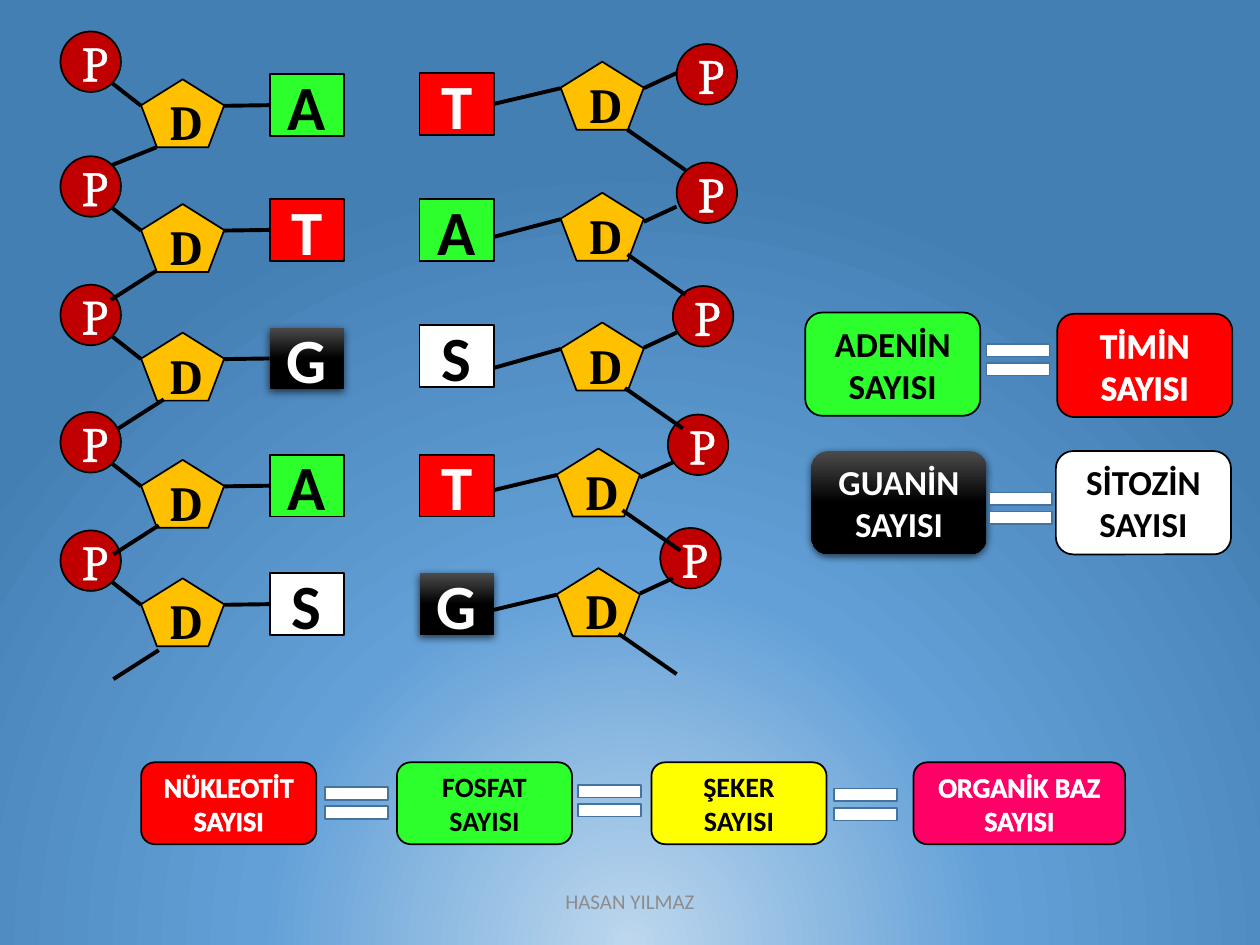
"""Build a slide on base pairing in a DNA ladder."""
from typing import NamedTuple, Optional

from lxml.etree import SubElement
from pptx import Presentation
from pptx.dml.color import RGBColor
from pptx.enum.shapes import MSO_CONNECTOR, MSO_SHAPE
from pptx.enum.text import MSO_ANCHOR, PP_ALIGN
from pptx.oxml import parse_xml
from pptx.oxml.ns import nsdecls, qn
from pptx.util import Inches, Pt

COLORS = {
    "black": "000000", "white": "FFFFFF", "pale": "FEFEFE", "gray": "8C8C8C",
    "green": "2DFF2D", "red": "FF0000", "wine": "C00000", "gold": "FFC000",
    "yellow": "FFFF00", "pink": "FF0066", "blue": "5B9BD5", "steel": "43739E",
    "coal": "4B4B4B", "sky": "BDD7EE", "mid": "63A0D7", "deep": "447FB4",
}


class Type(NamedTuple):
    size: int
    ink: str = "black"
    edge: str = ""
    face: str = "Calibri"
    bold: bool = True
    gap: int = 0


class Left(NamedTuple):
    top: float
    base: str
    x: float
    y: float
    dx: float = -0.36
    dy: float = 0.23


class Right(NamedTuple):
    top: float
    base: str
    sugar: tuple
    acid: tuple
    bond: float
    arm: float
    tail: tuple


class Box(NamedTuple):
    text: str
    fill: str
    x: float
    y: float
    w: float
    h: float
    type: Type


ACID = Type(28, "white", "white", "Cambria", False)
SUGAR = Type(28, face="Cambria")
PLAIN = Type(36)
GLOW = Type(36, "pale", "blue", gap=50)
BASES = {"A": ("green", PLAIN), "T": ("red", GLOW),
         "G": ("dark", GLOW), "S": ("white", PLAIN)}

LEFT = [
    Left(0.59, "A", 1.24, 1.17, -0.35, 0.14),
    Left(1.58, "T", 1.24, 2.15),
    Left(2.6, "G", 1.3, 3.17),
    Left(3.61, "A", 1.26, 4.17),
    Left(4.55, "S", 1.26, 5.16),
]
RIGHT = [
    Right(0.58, "T", (4.45, 0.49), (5.37, 0.35), 0.83, 0.7, (4.98, 1.03)),
    Right(1.58, "A", (4.45, 1.53), (5.37, 1.29), 1.88, 1.76, (4.98, 2.02)),
    Right(2.58, "S", (4.45, 2.56), (5.34, 2.27), 2.92, 2.76, (4.96, 3.08)),
    Right(3.61, "T", (4.42, 3.56), (5.3, 3.29), 3.89, 3.79, (4.94, 4.05)),
    Right(4.55, "G", (4.42, 4.51), (5.24, 4.19), 4.84, 4.71, (4.91, 5.03)),
]
BIG, SMALL = (1.39, 0.82), (1.39, 0.65)
BOXES = [
    Box("ADENİN SAYISI", "green", 6.39, 2.48, *BIG, Type(20)),
    Box("TİMİN SAYISI", "red", 8.39, 2.49, *BIG, Type(20, "white", "white")),
    Box("GUANİN SAYISI", "dark", 6.44, 3.58, *BIG, Type(20, "white")),
    Box("SİTOZİN SAYISI", "white", 8.38, 3.58, *BIG, Type(20)),
    Box("NÜKLEOTİT SAYISI", "red", 1.12, 6.05, *SMALL, Type(16, "white", "white")),
    Box("FOSFAT SAYISI", "green", 3.15, 6.05, *SMALL, Type(16)),
    Box("ŞEKER\nSAYISI", "yellow", 5.17, 6.05, *SMALL, Type(16)),
    Box("ORGANİK BAZ\nSAYISI", "pink", 7.25, 6.05, 1.68, 0.65,
        Type(16, "white", "white")),
]
EQUALS = [(2.49, 6.16), (4.5, 6.14), (6.53, 6.17), (7.74, 2.64), (7.76, 3.82)]


def color(name: str) -> RGBColor:
    return RGBColor.from_string(COLORS[name])


def blend(root, stops: list, form: str) -> None:
    """Put a gradient in place of the first empty fill."""
    marks = "".join(
        f'<a:gs pos="{pos}000"><a:srgbClr val="{COLORS[name]}">'
        f'<a:alpha val="{alpha}000"/></a:srgbClr></a:gs>'
        for pos, name, alpha in stops)
    grad = parse_xml(f'<a:gradFill {nsdecls("a")} rotWithShape="1">'
                     f'<a:gsLst>{marks}</a:gsLst>{form}</a:gradFill>')
    old = next(root.iter(qn("a:noFill")))
    old.getparent().replace(old, grad)


def write(shape, text: str, kind: Type) -> None:
    """Set centred text in the given type."""
    frame = shape.text_frame
    frame.word_wrap = True
    frame.vertical_anchor = MSO_ANCHOR.MIDDLE
    frame.text = text
    look = {"name": kind.face, "size": Pt(kind.size), "bold": kind.bold}
    for par in frame.paragraphs:
        par.alignment = PP_ALIGN.CENTER
        font = par.runs[0].font
        for key, value in look.items():
            setattr(font, key, value)
        font.color.rgb = color(kind.ink)
        props = par.runs[0]._r.get_or_add_rPr()
        if kind.gap:
            props.set("spc", str(kind.gap))
        if kind.edge:
            props.insert(0, parse_xml(
                f'<a:ln {nsdecls("a")} w="9525"><a:solidFill><a:srgbClr '
                f'val="{COLORS[kind.edge]}"/></a:solidFill></a:ln>'))


def draw(slide, form, box: Box, rim: str = "black"):
    """Add one filled shape with its text."""
    place = map(Inches, (box.x, box.y, box.w, box.h))
    shape = slide.shapes.add_shape(form, *place)
    shape.shadow.inherit = False
    if box.fill == "dark":
        shape.fill.background()
        shape.line.fill.background()
        blend(shape._element.spPr,
              [(0, "coal", 100), (50, "black", 100), (100, "black", 100)],
              '<a:lin ang="5400000" scaled="0"/>')
        shape._element.spPr.find(qn("a:effectLst")).append(parse_xml(
            f'<a:outerShdw {nsdecls("a")} blurRad="57150" dist="19050" '
            'dir="5400000" algn="ctr" rotWithShape="0"><a:srgbClr val="000000">'
            '<a:alpha val="63000"/></a:srgbClr></a:outerShdw>'))
    else:
        shape.fill.solid()
        shape.fill.fore_color.rgb = color(box.fill)
        shape.line.color.rgb = color(rim)
        shape.line.width = Pt(1)
    if box.text:
        write(shape, box.text, box.type)
    return shape


def acid(slide, x: float, y: float) -> None:
    draw(slide, MSO_SHAPE.OVAL, Box("P", "wine", x, y, 0.48, 0.48, ACID))


def sugar(slide, x: float, y: float) -> None:
    draw(slide, MSO_SHAPE.REGULAR_PENTAGON,
         Box("D", "gold", x, y, 0.66, 0.54, SUGAR))


def base(slide, name: str, x: float, y: float):
    fill, kind = BASES[name]
    return draw(slide, MSO_SHAPE.RECTANGLE,
                Box(name, fill, x, y, 0.59, 0.49, kind))


def link(slide, x: float, y: float, dx: float, dy: float,
         start: Optional[object] = None, end: Optional[object] = None) -> None:
    """Add a line, joined to a base's right or left side if given."""
    ends = map(Inches, (x, y, x + dx, y + dy))
    line = slide.shapes.add_connector(MSO_CONNECTOR.STRAIGHT, *ends)
    line.line.color.rgb = color("black")
    line.line.width = Pt(2.25)
    SubElement(line._element.spPr, qn("a:effectLst"))
    if start is not None:
        line.begin_connect(start, 3)
    if end is not None:
        line.end_connect(end, 1)


def main() -> None:
    deck = Presentation()
    deck.slide_width, deck.slide_height = Inches(10), Inches(7.5)
    slide = deck.slides.add_slide(deck.slide_layouts[6])
    slide.background.fill.background()
    blend(slide.element, [(0, "sky", 62), (47, "mid", 100), (100, "deep", 100)],
          '<a:path path="circle"><a:fillToRect l="50000" t="130000" '
          'r="50000" b="-30000"/></a:path>')
    for row in LEFT:
        acid(slide, 0.48, row.top - 0.34)
        sugar(slide, 1.12, row.top + 0.04)
        link(slide, 0.89, row.top + 0.07, 0.23, 0.18)
        side = base(slide, row.base, 2.14, row.top)
        link(slide, 1.78, row.top + 0.25, 0.36, 0, end=side)
    sides = [base(slide, row.base, 3.33, row.top) for row in RIGHT]
    for row in RIGHT:
        sugar(slide, *row.sugar)
    for row in RIGHT:
        acid(slide, *row.acid)
    for row, side in zip(RIGHT, sides):
        x, y = row.sugar
        level = abs(row.bond - row.top - 0.245) < 0.02
        link(slide, 3.92, row.bond, x - 3.92, y + 0.21 - row.bond,
             start=side if level else None)
        link(slide, x + 0.66, row.arm, 0.26, -0.12)
        link(slide, *row.tail, 0.46, 0.32)
    for row in LEFT:
        link(slide, row.x, row.y, row.dx, row.dy)
    for box in BOXES:
        draw(slide, MSO_SHAPE.ROUNDED_RECTANGLE, box)
    for x, y in EQUALS:
        draw(slide, MSO_SHAPE.MATH_EQUAL,
             Box("", "white", x, y, 0.68, 0.43, PLAIN), "steel")
    foot = slide.shapes.add_textbox(*map(Inches, (3.31, 6.95, 3.38, 0.4)))
    write(foot, "HASAN YILMAZ", Type(12, "gray", bold=False))
    deck.save("out.pptx")


if __name__ == "__main__":
    main()
